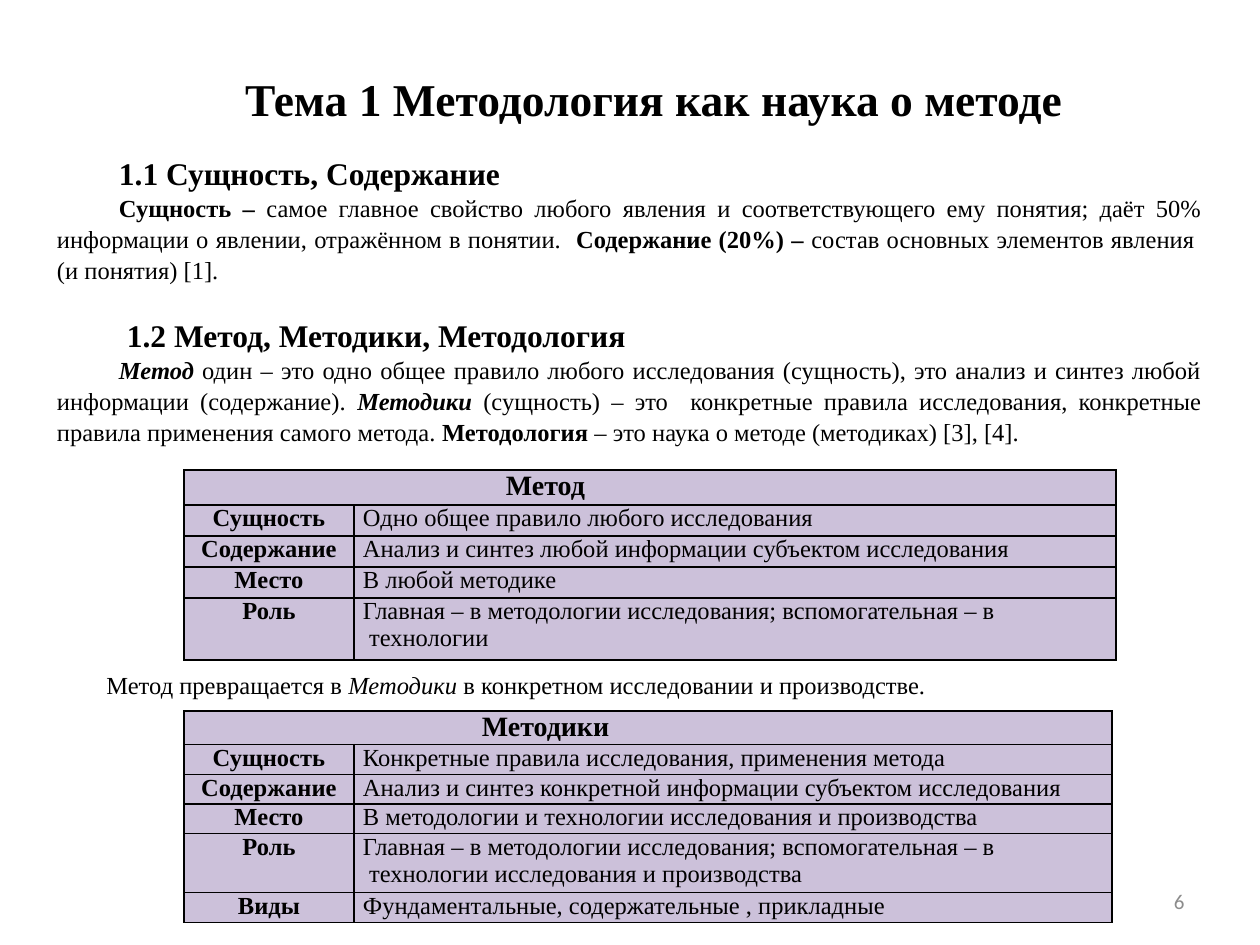
from lxml.etree import SubElement
from pptx import Presentation
from pptx.dml.color import RGBColor
from pptx.enum.text import MSO_ANCHOR as Anchor, PP_ALIGN as Align
from pptx.oxml.ns import qn
from pptx.util import Pt

PX = 914400 / 126
BLACK = RGBColor(0x00, 0x00, 0x00)
LILAC = RGBColor(0xCC, 0xC1, 0xDA)
GREY = RGBColor(0x8C, 0x8C, 0x8C)
SERIF = "Times New Roman"


def px(*lengths):
    return [round(length * PX) for length in lengths]


def write(paragraph, runs, size, align, font=SERIF, color=BLACK):
    paragraph.alignment = align
    paragraph.font.size = Pt(size)
    paragraph.font.name = font
    paragraph.font.color.rgb = color
    for text, style in runs:
        for number, line in enumerate(text.split("\n")):
            if number:
                paragraph.add_line_break()
            run = paragraph.add_run()
            run.text = line
            run.font.size = Pt(size)
            run.font.name = font
            run.font.color.rgb = color
            run.font.bold = "b" in style
            run.font.italic = "i" in style


prs = Presentation()
prs.slide_width, prs.slide_height = px(1260, 945)
slide = prs.slides.add_slide(prs.slide_layouts[5])

title = slide.shapes.title
title.left, title.top, title.width, title.height = px(100, 74, 1108, 48)
heading = title.text_frame
heading.margin_left = heading.margin_right = heading.margin_top = heading.margin_bottom = 0
heading.vertical_anchor = Anchor.MIDDLE
write(heading.paragraphs[0], [("Тема 1 Методология как наука о методе", "b")], 26, Align.CENTER)

sections = [
    (18, 0, [("1.1 Сущность, Содержание", "b")]),
    (14, 0, [
        ("Сущность – ", "b"),
        ("самое главное свойство любого явления и соответствующего ему понятия; "
         "даёт 50% информации о явлении, отражённом в понятии. ", ""),
        (" Содержание (20%) – ", "b"),
        ("состав основных элементов явления \n(и понятия) [1].", ""),
    ]),
    (18, 17, [(" 1.2 Метод, Методики, Методология", "b")]),
    (14, 0, [
        ("Метод", "bi"),
        (" один – это одно общее правило любого исследования (сущность), "
         "это анализ и синтез любой информации (содержание). ", ""),
        ("Методики ", "bi"),
        ("(сущность) – это  конкретные правила исследования, "
         "конкретные правила применения самого метода. ", ""),
        ("Методология", "b"),
        (" – это наука о методе (методиках) [3], [4].", ""),
    ]),
]
body = slide.shapes.add_textbox(*px(57, 152, 1145, 283)).text_frame
body.word_wrap = True
body.margin_left = body.margin_right = body.margin_top = body.margin_bottom = 0
for number, (size, gap, runs) in enumerate(sections):
    paragraph = body.add_paragraph() if number else body.paragraphs[0]
    write(paragraph, runs, size, Align.JUSTIFY)
    paragraph.line_spacing = 1.05
    paragraph.space_before = Pt(gap)
    paragraph._p.get_or_add_pPr().set("indent", str(px(62)[0]))

transition = slide.shapes.add_textbox(*px(94, 664, 1120, 42)).text_frame
transition.word_wrap = True
write(transition.paragraphs[0], [
    ("Метод превращается в ", ""),
    ("Методики", "i"),
    (" в конкретном исследовании и производстве.", ""),
], 14, Align.JUSTIFY)

tables = [
    (470, 762, "Метод", 322, [35, 31, 31, 31, 62], [
        ("Сущность", "Одно общее правило любого исследования"),
        ("Содержание", "Анализ и синтез любой информации субъектом исследования"),
        ("Место", "В любой методике"),
        ("Роль", "Главная – в методологии исследования; вспомогательная – в\n технологии"),
    ]),
    (711, 758, "Методики", 298, [33, 30, 29, 29, 59, 30], [
        ("Сущность", "Конкретные правила исследования, применения метода"),
        ("Содержание", "Анализ и синтез конкретной информации субъектом исследования"),
        ("Место", "В методологии и технологии исследования и производства"),
        ("Роль", "Главная – в методологии исследования; вспомогательная – в\n"
                 " технологии исследования и производства"),
        ("Виды", "Фундаментальные, содержательные , прикладные"),
    ]),
]
for top, value_width, name, name_offset, heights, features in tables:
    frame = slide.shapes.add_table(
        len(heights), 2, *px(184, top, 170 + value_width, sum(heights)))
    table = frame.table
    table.columns[0].width, table.columns[1].width = px(170, value_width)
    for row, height in zip(table.rows, px(*heights)):
        row.height = height
    for cell in table.iter_cells():
        cell.margin_left, cell.margin_right = px(9, 9)
        cell.margin_top = cell.margin_bottom = 0
        properties = cell._tc.get_or_add_tcPr()
        for side in ("a:lnL", "a:lnR", "a:lnT", "a:lnB"):
            border = SubElement(properties, qn(side), w=str(Pt(1)))
            ink = SubElement(border, qn("a:solidFill"))
            SubElement(ink, qn("a:srgbClr"), val=str(BLACK))
        cell.fill.solid()
        cell.fill.fore_color.rgb = LILAC
    header = table.cell(0, 0)
    header.merge(table.cell(0, 1))
    header.margin_left = px(name_offset)[0]
    write(header.text_frame.paragraphs[0], [(name, "b")], 16, Align.LEFT)
    for row, (feature, value) in enumerate(features, start=1):
        write(table.cell(row, 0).text_frame.paragraphs[0], [(feature, "b")], 14, Align.CENTER)
        value_text = table.cell(row, 1).text_frame
        for number, line in enumerate(value.split("\n")):
            paragraph = value_text.add_paragraph() if number else value_text.paragraphs[0]
            write(paragraph, [(line, "")], 14, Align.JUSTIFY)

page = slide.shapes.add_textbox(*px(903, 876, 294, 50)).text_frame
page.word_wrap = True
page.vertical_anchor = Anchor.MIDDLE
write(page.paragraphs[0], [("6", "")], 12, Align.RIGHT, "Calibri", GREY)

prs.save("out.pptx")
